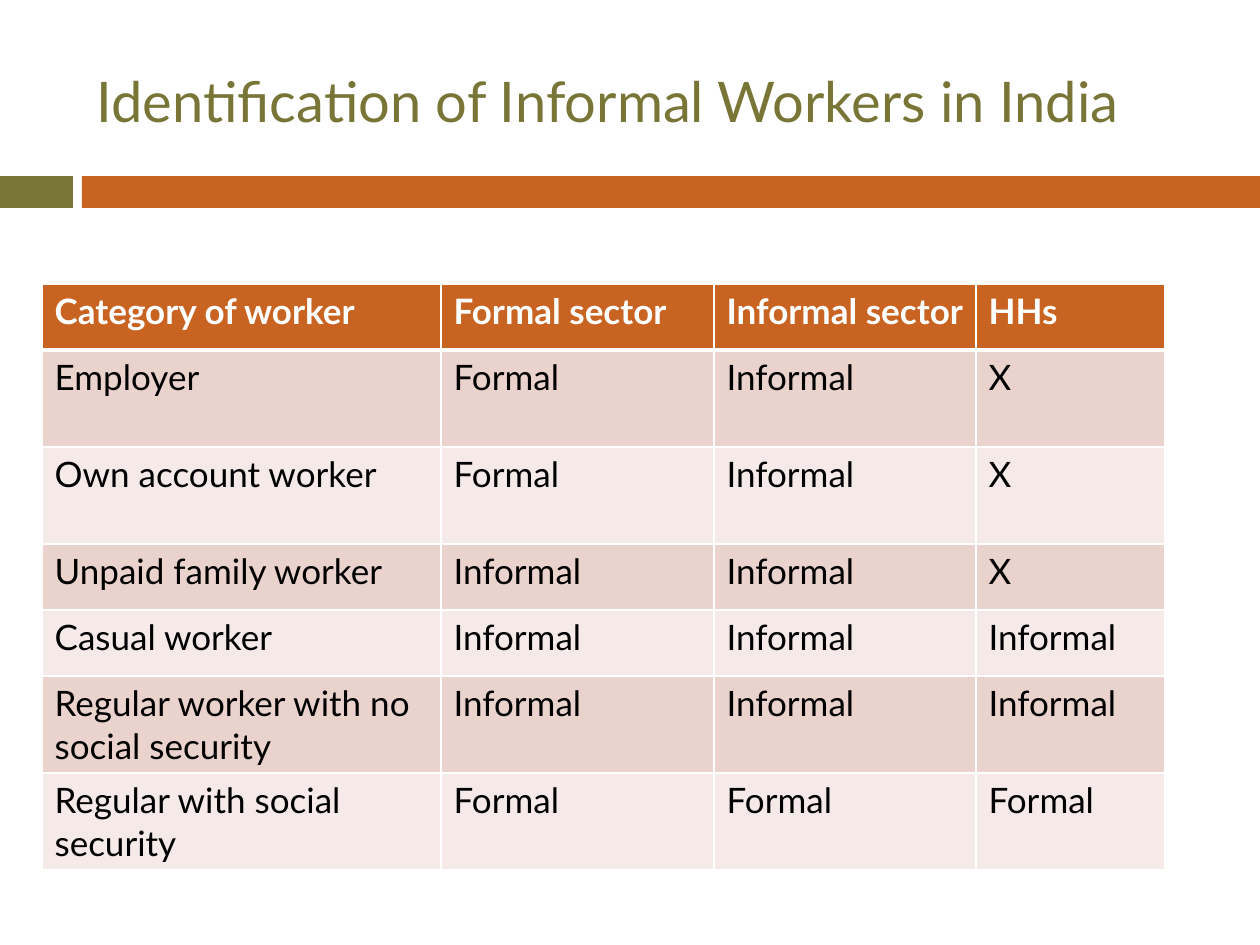
"""Build a slide with a table that identifies informal workers in India."""
from dataclasses import dataclass

import pptx
import pptx.dml.color
import pptx.enum.shapes
import pptx.enum.text
import pptx.oxml.ns
import pptx.util
from lxml import etree

RGBColor = pptx.dml.color.RGBColor
OLIVE = RGBColor(0x78, 0x75, 0x37)
ORANGE = RGBColor(0xC8, 0x63, 0x22)
ROSE = RGBColor(0xEB, 0xD3, 0xCD)
PALE_ROSE = RGBColor(0xF5, 0xEA, 0xE8)
WHITE = RGBColor(0xFF, 0xFF, 0xFF)
BLACK = RGBColor(0, 0, 0)
FONT = "Lato"
PX_PER_INCH = 126


@dataclass(frozen=True)
class Box:
    left: int
    top: int
    width: int
    height: int


@dataclass(frozen=True)
class Bar:
    box: Box
    color: RGBColor


TITLE = "Identification of Informal Workers in India"
TITLE_BOX = Box(84, 32, 1124, 136)
BARS = [
    Bar(Box(0, 176, 73, 32), OLIVE),
    Bar(Box(82, 176, 1178, 32), ORANGE),
]
COLUMN_WIDTHS = [399, 273, 262, 189]
ROW_HEIGHTS = [66, 97, 97, 66, 66, 97, 97]
TABLE_BOX = Box(42, 284, sum(COLUMN_WIDTHS), sum(ROW_HEIGHTS))
ROWS = [
    ("Category of worker", "Formal sector", "Informal sector", "HHs"),
    ("Employer", "Formal", "Informal", "X"),
    ("Own account worker", "Formal", "Informal", "X"),
    ("Unpaid family worker", "Informal", "Informal", "X"),
    ("Casual worker", "Informal", "Informal", "Informal"),
    ("Regular worker with no social security", "Informal", "Informal", "Informal"),
    ("Regular with social security", "Formal", "Formal", "Formal"),
]


def px(n: int) -> pptx.util.Emu:
    return pptx.util.Emu(round(n * 914400 / PX_PER_INCH))


def emu(box: Box) -> tuple:
    return px(box.left), px(box.top), px(box.width), px(box.height)


def style(p, size: int, color: RGBColor, bold: bool = False) -> None:
    p.font.name = FONT
    p.font.size = pptx.util.Pt(size)
    p.font.bold = bold
    p.font.color.rgb = color


def add_title(s) -> None:
    sp = s.shapes.title
    sp.left, sp.top, sp.width, sp.height = emu(TITLE_BOX)
    tf = sp.text_frame
    tf.text = TITLE
    tf.vertical_anchor = pptx.enum.text.MSO_ANCHOR.MIDDLE
    p = tf.paragraphs[0]
    p.alignment = pptx.enum.text.PP_ALIGN.LEFT
    style(p, 32, OLIVE)


def add_bar(s, bar: Bar) -> None:
    sp = s.shapes.add_shape(pptx.enum.shapes.MSO_SHAPE.RECTANGLE, *emu(bar.box))
    sp.shadow.inherit = False
    sp.fill.solid()
    sp.fill.fore_color.rgb = bar.color
    sp.line.fill.background()


def add_border(cell, side: str, points: int) -> None:
    qn = pptx.oxml.ns.qn
    props = cell._tc.get_or_add_tcPr()
    line = etree.SubElement(props, qn(f"a:ln{side}"), w=str(pptx.util.Pt(points)))
    fill = etree.SubElement(line, qn("a:solidFill"))
    etree.SubElement(fill, qn("a:srgbClr"), val=str(WHITE))


def fill_cell(cell, text: str, row: int) -> None:
    header = row == 0
    cell.text = text
    style(cell.text_frame.paragraphs[0], 20, WHITE if header else BLACK, header)
    widths = {"L": 1, "R": 1, "T": 3 if row == 1 else 1, "B": 3 if header else 1}
    for side, points in widths.items():
        add_border(cell, side, points)
    cell.fill.solid()
    cell.fill.fore_color.rgb = ORANGE if header else (PALE_ROSE, ROSE)[row % 2]


def add_worker_table(s) -> None:
    table = s.shapes.add_table(len(ROWS), len(COLUMN_WIDTHS), *emu(TABLE_BOX)).table
    for column, width in zip(table.columns, COLUMN_WIDTHS):
        column.width = px(width)
    for i, (height, texts) in enumerate(zip(ROW_HEIGHTS, ROWS)):
        table.rows[i].height = px(height)
        for j, text in enumerate(texts):
            fill_cell(table.cell(i, j), text, i)


def main() -> None:
    prs = pptx.Presentation()
    prs.slide_width, prs.slide_height = px(1260), px(945)
    s = prs.slides.add_slide(prs.slide_layouts[5])
    add_title(s)
    for bar in BARS:
        add_bar(s, bar)
    add_worker_table(s)
    prs.save("out.pptx")


if __name__ == "__main__":
    main()
